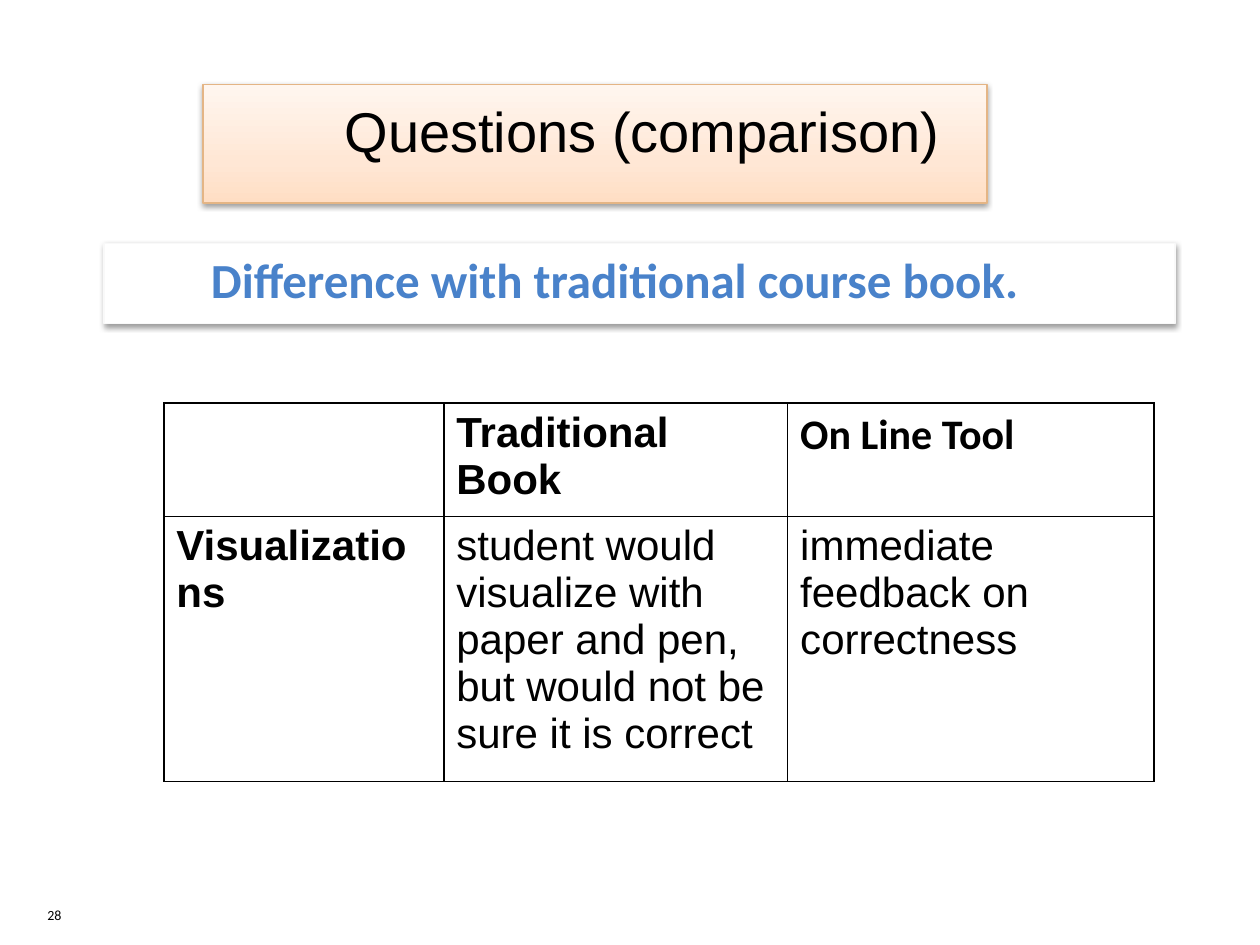
"""Build the slide comparing a traditional book with an online tool."""
from lxml import etree
from pptx import Presentation
from pptx.dml.color import RGBColor
from pptx.enum import shapes, text
from pptx.oxml import parse_xml
from pptx.oxml.ns import nsdecls, qn
from pptx.util import Pt


def rgb(value):
    return RGBColor.from_string(value)


def style(p, font, size, color="000000", bold=False):
    for r in p.runs:
        r.font.name = font
        r.font.size = Pt(size)
        r.font.bold = bold
        r.font.color.rgb = rgb(color)


SHADOW = (
    f'<a:effectLst {nsdecls("a")}><a:outerShdw blurRad="{Pt(3.1)}" dist="{Pt(1.6)}" '
    'dir="5400000" rotWithShape="0"><a:srgbClr val="000000"><a:alpha val="38000"/>'
    '</a:srgbClr></a:outerShdw></a:effectLst>'
)

prs = Presentation()
prs.slide_width, prs.slide_height = Pt(720), Pt(540)
s = prs.slides.add_slide(prs.slide_layouts[6])

number = s.shapes.add_textbox(Pt(20), Pt(514), Pt(24.5), Pt(17.3))
tf = number.text_frame
tf.vertical_anchor = text.MSO_ANCHOR.BOTTOM
tf.text = "28"
style(tf.paragraphs[0], "Calibri", 8)

banners = [
    ("Questions (comparison)", (116, 48.2, 448, 67.8), "E4B585", 7,
     text.PP_ALIGN.CENTER, ("Arial", 32)),
    ("Difference with traditional course book.", (59.5, 139, 612, 46), "F9F9F9", 3.6,
     text.PP_ALIGN.LEFT, ("Calibri", 28, "4982CA", True)),
]
for words, box, line, top, align, font in banners:
    sp = s.shapes.add_shape(shapes.MSO_SHAPE.RECTANGLE, *map(Pt, box))
    sp.fill.solid()
    sp.fill.fore_color.rgb = rgb("FFFFFF")
    sp.line.color.rgb = rgb(line)
    sp.line.width = Pt(0.75)
    sp._element.spPr.append(parse_xml(SHADOW))
    tf = sp.text_frame
    tf.word_wrap = True
    tf.vertical_anchor = text.MSO_ANCHOR.TOP
    tf.margin_top = Pt(top)
    tf.text = words
    p = tf.paragraphs[0]
    p.alignment = align
    pPr = p._p.get_or_add_pPr()
    pPr.set("marL", str(Pt(81)))
    pPr.set("indent", str(Pt(-27)))
    style(p, *font)
    if line == "E4B585":
        stops = [(0, "FFDEC4"), (35, "FFE7D5"), (100, "FFF6EF")]
        gs = "".join(f'<a:gs pos="{pos * 1000}"><a:srgbClr val="{color}"/></a:gs>'
                     for pos, color in stops)
        grad = parse_xml(f'<a:gradFill {nsdecls("a")} rotWithShape="1"><a:gsLst>{gs}</a:gsLst>'
                         '<a:lin ang="16200000" scaled="0"/></a:gradFill>')
        spPr = sp._element.spPr
        spPr.replace(spPr.find(qn("a:solidFill")), grad)

rows = [
    ["", "Traditional Book", "On Line Tool"],
    ["Visualizations",
     "student would visualize with paper and pen, but would not be sure it is correct",
     "immediate feedback on correctness"],
]
widths, heights = [160, 196.5, 209.5], [61, 141]
table = s.shapes.add_table(2, 3, Pt(93.6), Pt(230.4), Pt(sum(widths)), Pt(sum(heights))).table
for column, width in zip(table.columns, widths):
    column.width = Pt(width)
for row, height in zip(table.rows, heights):
    row.height = Pt(height)
for i, row in enumerate(rows):
    for j, words in enumerate(row):
        cell = table.cell(i, j)
        cell.text = words
        font = "Calibri" if (i, j) == (0, 2) else "Arial"
        style(cell.text_frame.paragraphs[0], font, 24, bold=i == 0 or j == 0)
        tcPr = cell._tc.get_or_add_tcPr()
        for side in ("lnL", "lnR", "lnT", "lnB"):
            ln = etree.SubElement(tcPr, qn(f"a:{side}"), w=str(Pt(1)))
            fill = etree.SubElement(ln, qn("a:solidFill"))
            etree.SubElement(fill, qn("a:srgbClr"), val="000000")
        cell.fill.background()

prs.save("out.pptx")
